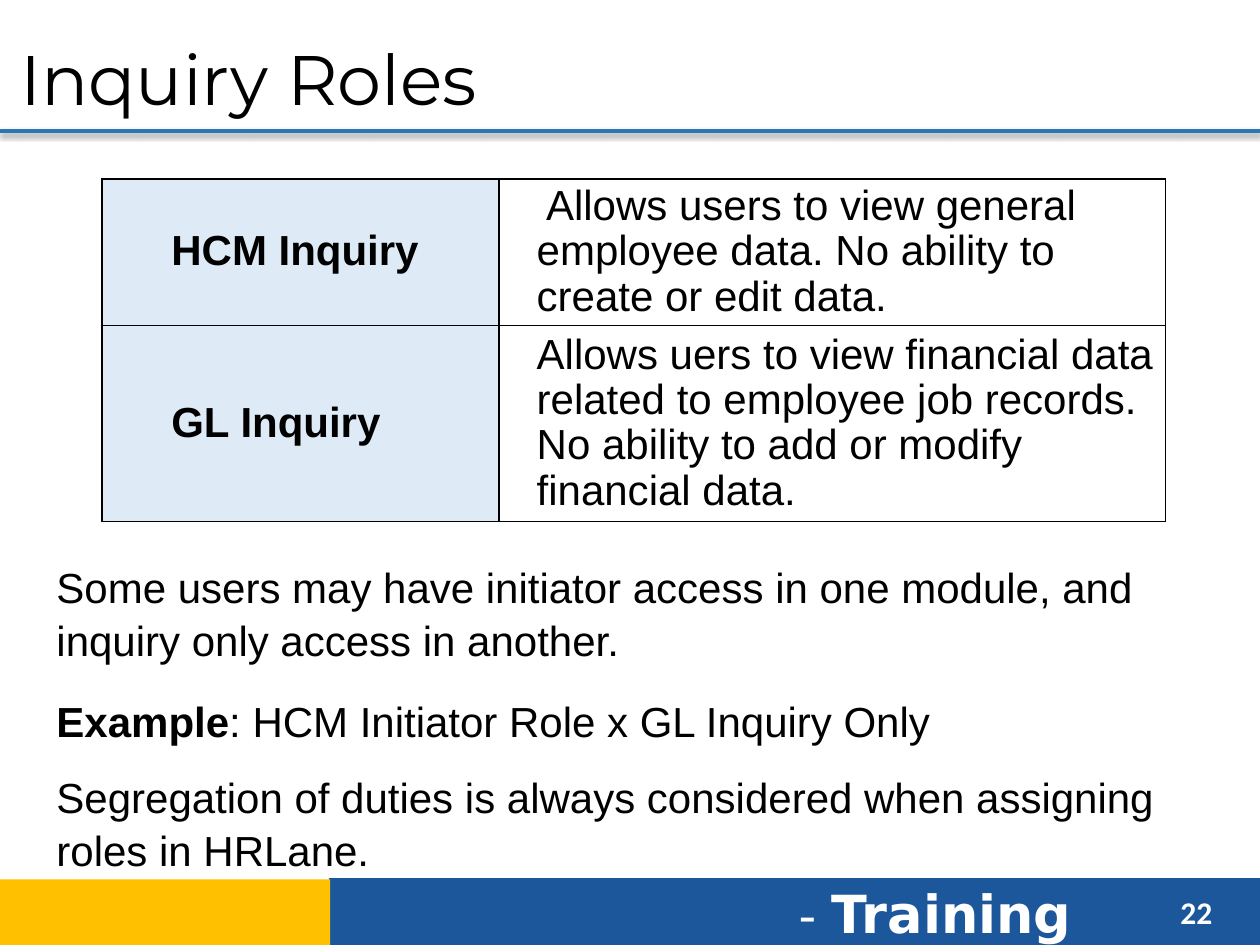
import lxml.etree
import pptx
import pptx.dml.color
import pptx.enum.shapes
import pptx.enum.text
import pptx.oxml
import pptx.oxml.ns
import pptx.util

Inches = pptx.util.Inches
Pt = pptx.util.Pt
COLORS = {
    "text": "000000",
    "white": "FFFFFF",
    "footer": "1D579B",
    "gold": "FFC000",
    "rule": "2E75B5",
    "role": "DEEBF7",
}
ROLES = [
    ("HCM Inquiry",
     " Allows users to view general employee data. "
     "No ability to create or edit data."),
    ("GL Inquiry",
     "Allows uers to view financial data related to employee job records. "
     "No ability to add or modify financial data."),
]
# Each paragraph: space before in points, then runs of (text, bold)
NOTES = [
    (0, [("Some users may have initiator access in one module, "
          "and inquiry only access in another.", False)]),
    (16, [("Example", True), (": HCM Initiator Role x GL Inquiry Only", False)]),
    (13, [("Segregation of duties is always considered when assigning "
           "roles in HRLane.", False)]),
]


def rgb(name):
    return pptx.dml.color.RGBColor.from_string(COLORS[name])


class SlideBuilder:
    def __init__(self, slide, font_name="Arial", size=24):
        self.slide = slide
        self.font_name = font_name
        self.size = size

    def style(self, font, size=None, name=None, color="text", bold=False):
        font.size = Pt(size or self.size)
        font.name = name or self.font_name
        font.bold = bold
        font.color.rgb = rgb(color)

    def title(self, text, left, top, width, height):
        title = self.slide.shapes.title
        title.left, title.top = Inches(left), Inches(top)
        title.width, title.height = Inches(width), Inches(height)
        frame = title.text_frame
        frame.text = text
        frame.auto_size = pptx.enum.text.MSO_AUTO_SIZE.NONE
        frame.vertical_anchor = pptx.enum.text.MSO_ANCHOR.MIDDLE
        paragraph = frame.paragraphs[0]
        paragraph.alignment = pptx.enum.text.PP_ALIGN.LEFT
        self.style(paragraph.font, 40, "Montserrat")

    def bar(self, color, left, top, width, height):
        shape = self.slide.shapes.add_shape(
            pptx.enum.shapes.MSO_SHAPE.RECTANGLE,
            Inches(left), Inches(top), Inches(width), Inches(height))
        shape.shadow.inherit = False
        shape.fill.solid()
        shape.fill.fore_color.rgb = rgb(color)
        shape.line.fill.background()

    def rule(self, top, width):
        """Draw a full-width line with a soft shadow below it."""
        connector = self.slide.shapes.add_connector(
            pptx.enum.shapes.MSO_CONNECTOR.STRAIGHT,
            Inches(0), Inches(top), Inches(width), Inches(top))
        connector.line.color.rgb = rgb("rule")
        connector.line.width = Pt(2.25)
        properties = connector._element.spPr
        properties.append(pptx.oxml.parse_xml(
            f'<a:effectLst {pptx.oxml.ns.nsdecls("a")}>'
            f'<a:outerShdw blurRad="{Pt(3.1)}" dist="{Pt(1.6)}" dir="5400000" '
            f'rotWithShape="0"><a:srgbClr val="{COLORS["text"]}">'
            '<a:alpha val="38000"/></a:srgbClr></a:outerShdw></a:effectLst>'))

    def text_box(self, left, top, width, height):
        box = self.slide.shapes.add_textbox(
            Inches(left), Inches(top), Inches(width), Inches(height))
        box.text_frame.word_wrap = True
        return box.text_frame

    def label(self, runs, left, top, width, height):
        """Add one line of white text from (text, size, font, bold) runs."""
        paragraph = self.text_box(left, top, width, height).paragraphs[0]
        for text, size, name, bold in runs:
            run = paragraph.add_run()
            run.text = text
            self.style(run.font, size, name, "white", bold)

    def notes(self, notes, left, top, width, height):
        frame = self.text_box(left, top, width, height)
        for index, (space, runs) in enumerate(notes):
            paragraph = frame.add_paragraph() if index else frame.paragraphs[0]
            paragraph.space_before = Pt(space)
            paragraph.line_spacing = 1.05
            self.style(paragraph.font)
            for text, bold in runs:
                run = paragraph.add_run()
                run.text = text
                self.style(run.font, bold=bold)

    def cell(self, cell, text, indent, bold, level):
        cell.margin_left = cell.margin_right = Inches(0.05)
        cell.margin_top = cell.margin_bottom = 0
        cell.vertical_anchor = pptx.enum.text.MSO_ANCHOR.MIDDLE
        cell.text = text
        paragraph = cell.text_frame.paragraphs[0]
        paragraph.level = level
        paragraph.line_spacing = 0.97
        properties = paragraph._p.get_or_add_pPr()
        properties.set("marL", str(Inches(indent)))
        properties.set("indent", "0")
        self.style(paragraph.font, bold=bold)
        cell_properties = cell._tc.get_or_add_tcPr()
        for side in ("lnL", "lnR", "lnT", "lnB"):
            border = lxml.etree.SubElement(
                cell_properties, pptx.oxml.ns.qn(f"a:{side}"), w=str(Pt(1)))
            fill = lxml.etree.SubElement(border, pptx.oxml.ns.qn("a:solidFill"))
            lxml.etree.SubElement(
                fill, pptx.oxml.ns.qn("a:srgbClr"), val=COLORS["text"])

    def role_table(self, roles, left, top, column_widths, row_heights):
        table = self.slide.shapes.add_table(
            len(roles), len(column_widths), Inches(left), Inches(top),
            Inches(sum(column_widths)), Inches(sum(row_heights))).table
        table.first_row = table.horz_banding = False
        for column, width in zip(table.columns, column_widths):
            column.width = Inches(width)
        for row, height, (role, description) in zip(table.rows, row_heights, roles):
            row.height = Inches(height)
            role_cell, description_cell = row.cells
            self.cell(role_cell, role, 0.5, True, 1)
            role_cell.fill.solid()
            role_cell.fill.fore_color.rgb = rgb("role")
            self.cell(description_cell, description, 0.25, False, 0)
            description_cell.fill.background()


def main():
    presentation = pptx.Presentation()
    presentation.slide_width = Inches(10)
    presentation.slide_height = Inches(7.5)
    slide = presentation.slides.add_slide(presentation.slide_layouts[5])
    builder = SlideBuilder(slide)
    builder.bar("footer", 2.61, 6.97, 7.39, 0.55)
    builder.label([("- ", 28, "DejaVu Sans", False),
                   ("Training", 30, "DejaVu Sans", True)], 6.24, 6.94, 2.8, 0.61)
    builder.rule(1.04, 10)
    builder.label([("22", 18, "Calibri", True)], 9.27, 7.04, 0.6, 0.4)
    builder.bar("gold", -0.01, 6.98, 2.63, 0.55)
    builder.title("Inquiry Roles", 0.06, 0.3, 10, 0.63)
    builder.role_table(ROLES, 0.81, 1.42, [3.15, 5.29], [1.11, 1.49])
    builder.notes(NOTES, 0.35, 4.39, 9.67, 2.56)
    presentation.save("out.pptx")


if __name__ == "__main__":
    main()
